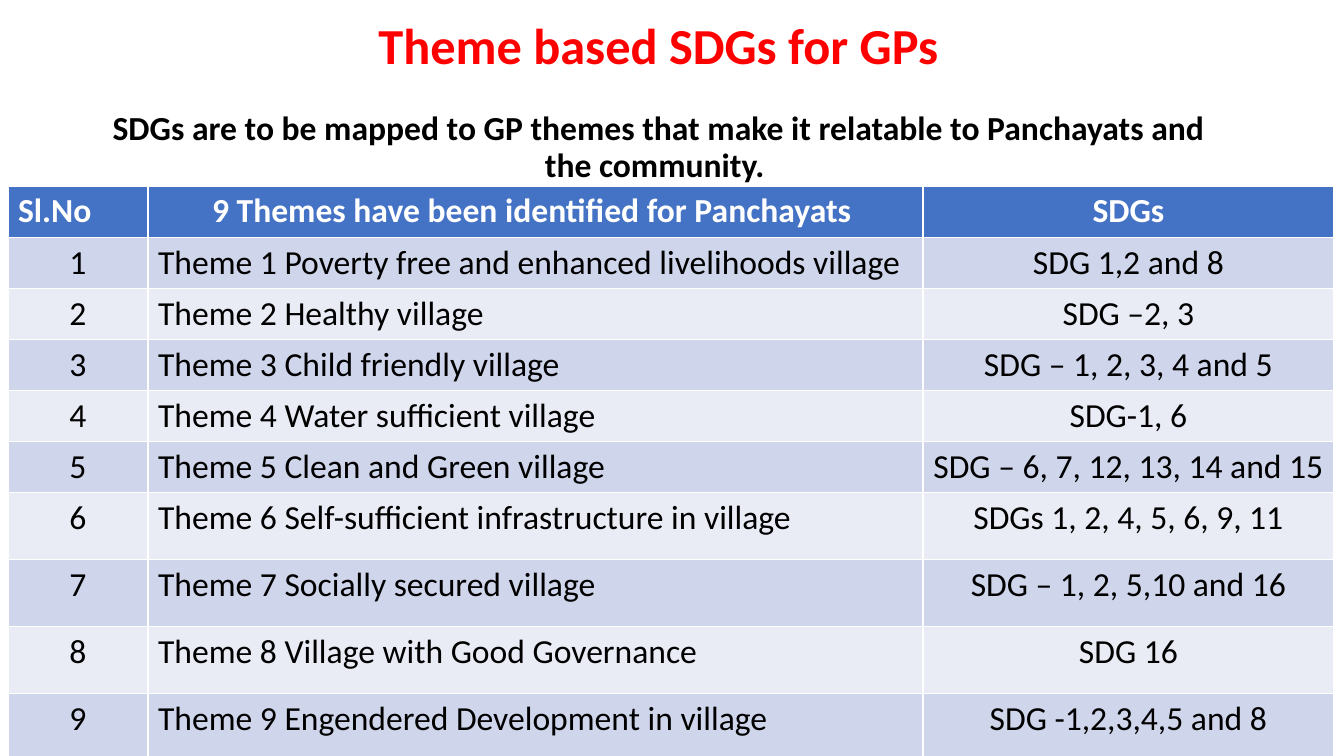
from dataclasses import dataclass

from pptx import Presentation
from pptx.dml.color import RGBColor
from pptx.enum.text import MSO_ANCHOR, PP_ALIGN
from pptx.util import Emu, Pt

LEFT, CENTER = PP_ALIGN.LEFT, PP_ALIGN.CENTER
TOP = MSO_ANCHOR.TOP
EMU_PER_PX = 914400 / 100.8


@dataclass(frozen=True)
class Theme:
    font: str = "Calibri"
    title_size: int = 36
    body_size: int = 24
    title: str = "FF0000"
    text: str = "000000"
    header_text: str = "FFFFFF"
    header_fill: str = "4472C4"
    bands: tuple = ("CFD5EA", "E9EBF5")


THEME = Theme()

HEADERS = ("Sl.No", "9 Themes have been identified for Panchayats ", "SDGs")
VILLAGE_THEMES = (
    ("Poverty free and enhanced livelihoods village", "SDG 1,2 and 8"),
    ("Healthy village", "SDG –2, 3"),
    ("Child friendly village", "SDG – 1, 2, 3, 4 and 5"),
    ("Water sufficient village", "SDG-1, 6"),
    ("Clean and Green village", "SDG – 6, 7, 12, 13, 14 and 15"),
    ("Self-sufficient infrastructure in village", "SDGs 1, 2, 4, 5, 6, 9, 11"),
    ("Socially secured village", "SDG – 1, 2, 5,10 and 16"),
    ("Village with Good Governance", "SDG 16"),
    ("Engendered Development in village", "SDG -1,2,3,4,5 and 8"),
)
COLUMN_WIDTHS = (140, 775, 411)
ROW_HEIGHTS = [51] * 6 + [67] * 3 + [63]


def px(length):
    return Emu(round(length * EMU_PER_PX))


def write(paragraph, text, size, color, bold, align):
    paragraph.text = text
    paragraph.alignment = align
    font = paragraph.font
    font.name, font.size, font.bold = THEME.font, Pt(size), bold
    font.color.rgb = RGBColor.from_string(color)


def add_heading(slide, left, top, width, height):
    frame = slide.shapes.add_textbox(px(left), px(top), px(width), px(height)).text_frame
    frame.word_wrap = True
    frame.vertical_anchor = TOP

    # Title
    title = frame.paragraphs[0]
    write(title, "Theme based SDGs for GPs", THEME.title_size, THEME.title, True, CENTER)
    title.line_spacing = 0.9

    # Introduction, set one line below the title
    intro = frame.add_paragraph()
    write(intro, "SDGs are to be mapped to GP themes that make it relatable to "
          "Panchayats and the community. ", THEME.body_size, THEME.text, True, CENTER)
    intro.line_spacing = 0.9
    intro.space_before = Pt(26)


def fill_row(table, row, texts, aligns, fill, color, bold):
    for column, (text, align) in enumerate(zip(texts, aligns)):
        cell = table.cell(row, column)
        cell.fill.solid()
        cell.fill.fore_color.rgb = RGBColor.from_string(fill)
        write(cell.text_frame.paragraphs[0], text, THEME.body_size, color, bold, align)


def add_theme_table(slide, left, top, width, height):
    table = slide.shapes.add_table(len(ROW_HEIGHTS), len(COLUMN_WIDTHS),
                                   px(left), px(top), px(width), px(height)).table
    for column, column_width in zip(table.columns, COLUMN_WIDTHS):
        column.width = px(column_width)
    for row, row_height in zip(table.rows, ROW_HEIGHTS):
        row.height = px(row_height)

    # Header row
    fill_row(table, 0, HEADERS, (LEFT, CENTER, CENTER),
             THEME.header_fill, THEME.header_text, True)

    # One banded row per theme
    for number, (village, goals) in enumerate(VILLAGE_THEMES, start=1):
        fill_row(table, number, (str(number), f"Theme {number} {village}", goals),
                 (CENTER, LEFT, CENTER), THEME.bands[(number - 1) % 2], THEME.text, False)


def main():
    presentation = Presentation()
    presentation.slide_width, presentation.slide_height = px(1344), px(756)
    slide = presentation.slides.add_slide(presentation.slide_layouts[6])
    add_theme_table(slide, 8, 186, sum(COLUMN_WIDTHS), sum(ROW_HEIGHTS))
    add_heading(slide, 79, 16, 1159, 72)
    presentation.save("out.pptx")


if __name__ == "__main__":
    main()
